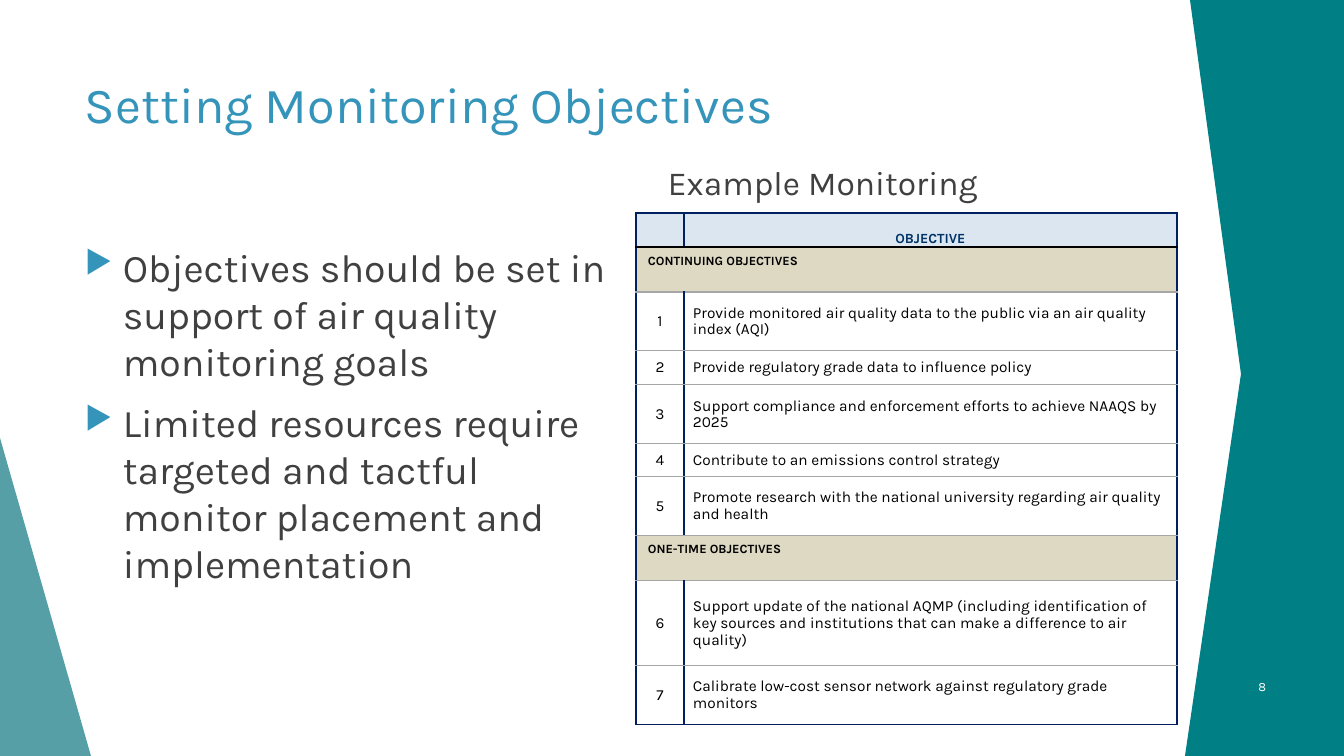
from dataclasses import dataclass
from typing import Any

from lxml import etree
from pptx import Presentation
from pptx.dml.color import RGBColor
from pptx.enum.shapes import MSO_SHAPE
from pptx.enum.text import MSO_ANCHOR, PP_ALIGN
from pptx.oxml.ns import qn
from pptx.util import Emu, Pt

RIGHT_TRIANGLE = MSO_SHAPE.RIGHT_TRIANGLE
TOP, MIDDLE, BOTTOM = MSO_ANCHOR.TOP, MSO_ANCHOR.MIDDLE, MSO_ANCHOR.BOTTOM
LEFT, CENTER, RIGHT = PP_ALIGN.LEFT, PP_ALIGN.CENTER, PP_ALIGN.RIGHT

FONT = "Karla"
BLUE, TEAL, PALE_TEAL = "3494BA", "008085", "3A8F98"
TEXT_GREY, WHITE, BLACK = "404040", "FFFFFF", "000000"
NAVY, RULE_GREY = "002060", "A6A6A6"
EMU_PER_PX = 914400 / 100.8


def px(length: int) -> Emu:
    return Emu(round(length * EMU_PER_PX))


def color(value: str) -> RGBColor:
    return RGBColor.from_string(value)


@dataclass
class TextBlock:
    box: tuple[int, int, int, int]
    paragraphs: list[str]
    size: int
    ink: str = TEXT_GREY
    align: Any = LEFT
    anchor: Any = TOP
    bullets: bool = False


@dataclass
class RowStyle:
    size: int
    ink: str
    bold: bool
    line_pt: float
    after_pt: int
    anchor: Any
    margins: tuple[int, int, int, int]
    aligns: tuple[Any, Any]
    fill: str | None = None


@dataclass
class ObjectiveRow:
    height: int
    cells: tuple[str, str]
    style: RowStyle
    merged: bool = False


def add_span(para: Any, text: str, size: int, ink: str, bold: bool = False) -> None:
    span = para.add_run()
    span.text = text
    for name, value in {"name": FONT, "size": Pt(size), "bold": bold}.items():
        setattr(span.font, name, value)
    span.font.color.rgb = color(ink)


def add_bullet(para: Any) -> None:
    props = para._p.get_or_add_pPr()
    props.set("marL", str(px(38)))
    props.set("indent", str(-px(38)))
    tint = etree.SubElement(props, qn("a:buClr"))
    etree.SubElement(tint, qn("a:srgbClr"), val=BLUE)
    etree.SubElement(props, qn("a:buSzPct"), val="80000")
    etree.SubElement(props, qn("a:buChar"), char="▶")


def add_text(page: Any, block: TextBlock) -> None:
    box = page.shapes.add_textbox(*map(px, block.box))
    frame = box.text_frame
    frame.word_wrap = True
    frame.vertical_anchor = block.anchor
    for index, text in enumerate(block.paragraphs):
        para = frame.add_paragraph() if index else frame.paragraphs[0]
        if block.bullets:
            add_bullet(para)
        para.alignment = block.align
        if index:
            para.space_before = Pt(10)
        add_span(para, text, block.size, block.ink)


def paint(shape: Any, fill: str) -> None:
    shape.shadow.inherit = False
    shape.fill.solid()
    shape.fill.fore_color.rgb = color(fill)
    shape.line.fill.background()


def set_borders(cell: Any, borders: dict[str, tuple[str, float]]) -> None:
    props = cell._tc.get_or_add_tcPr()
    for side, (ink, width) in borders.items():
        line = etree.SubElement(props, qn(f"a:ln{side}"), w=str(Pt(width)))
        solid = etree.SubElement(line, qn("a:solidFill"))
        etree.SubElement(solid, qn("a:srgbClr"), val=ink)


def fill_cell(cell: Any, text: str, align: Any, style: RowStyle) -> None:
    left, top, right, bottom = map(px, style.margins)
    formats = {"margin_left": left, "margin_top": top, "margin_right": right,
               "margin_bottom": bottom, "vertical_anchor": style.anchor}
    for name, value in formats.items():
        setattr(cell, name, value)
    if style.fill:
        cell.fill.solid()
        cell.fill.fore_color.rgb = color(style.fill)
    else:
        cell.fill.background()
    para = cell.text_frame.paragraphs[0]
    formats = {"alignment": align, "line_spacing": Pt(style.line_pt),
               "space_after": Pt(style.after_pt)}
    for name, value in formats.items():
        setattr(para, name, value)
    add_span(para, text, style.size, style.ink, style.bold)


def add_objectives(page: Any, left: int, top: int, widths: tuple[int, int],
                   rows: list[ObjectiveRow]) -> None:
    height = sum(row.height for row in rows)
    frame = page.shapes.add_table(len(rows), len(widths), px(left), px(top),
                                  px(sum(widths)), px(height))
    table = frame.table
    table.first_row = table.horz_banding = False
    for column, width in zip(table.columns, widths):
        column.width = px(width)
    # Horizontal rules from the top edge to the bottom edge
    rules = [(NAVY, 1), (BLACK, 1.5)] + [(RULE_GREY, 1)] * (len(rows) - 2) + [(NAVY, 1)]
    for r, row in enumerate(rows):
        table.rows[r].height = px(row.height)
        for c, text in enumerate(row.cells):
            cell = table.cell(r, c)
            set_borders(cell, {"L": (NAVY, 1), "R": (NAVY, 1),
                               "T": rules[r], "B": rules[r + 1]})
            fill_cell(cell, text, row.style.aligns[c], row.style)
        if row.merged:
            table.cell(r, 0).merge(table.cell(r, 1))


HEADER = RowStyle(10, "003366", True, 14.5, 6, BOTTOM, (9, 1, 9, 0), (CENTER, CENTER), "DCE6F1")
SECTION = RowStyle(9, BLACK, True, 11, 2, TOP, (12, 6, 12, 6), (LEFT, LEFT), "DDD9C3")
ITEM = RowStyle(11, BLACK, False, 12, 1, MIDDLE, (9, 1, 9, 0), (CENTER, LEFT))

ROWS = [
    ObjectiveRow(34, ("", "OBJECTIVE"), HEADER),
    ObjectiveRow(45, ("CONTINUING OBJECTIVES", ""), SECTION, True),
    ObjectiveRow(59, ("1", "Provide monitored air quality data to the public via "
                      "an air quality index (AQI)"), ITEM),
    ObjectiveRow(34, ("2", "Provide regulatory grade data to influence policy"), ITEM),
    ObjectiveRow(59, ("3", "Support compliance and enforcement efforts to achieve "
                      "NAAQS by 2025"), ITEM),
    ObjectiveRow(33, ("4", "Contribute to an emissions control strategy"), ITEM),
    ObjectiveRow(59, ("5", "Promote research with the national university regarding "
                      "air quality and health"), ITEM),
    ObjectiveRow(45, ("ONE-TIME OBJECTIVES", ""), SECTION, True),
    ObjectiveRow(85, ("6", "Support update of the national AQMP (including identification "
                      "of key sources and institutions that can make a difference to "
                      "air quality)"), ITEM),
    ObjectiveRow(59, ("7", "Calibrate low-cost sensor network against regulatory "
                      "grade monitors"), ITEM),
]

TEXTS = [
    TextBlock((75, 68, 776, 88), ["Setting Monitoring Objectives"], 36, BLUE),
    TextBlock((75, 238, 541, 427),
              ["Objectives should be set in support of air quality monitoring goals",
               "Limited resources require targeted and tactful monitor placement "
               "and implementation"], 28, bullets=True),
    TextBlock((658, 157, 496, 71), ["Example Monitoring"], 24),
    TextBlock((1201, 667, 75, 40), ["8"], 9, WHITE, RIGHT, MIDDLE),
]

BAND = [(1344, 0), (1344, 756), (1185, 756), (1241, 374), (1190, 0)]


def main() -> None:
    deck = Presentation()
    deck.slide_width, deck.slide_height = px(1344), px(756)
    page = deck.slides.add_slide(deck.slide_layouts[6])

    # Side decorations
    wedge = page.shapes.add_shape(RIGHT_TRIANGLE, px(-2), px(431), px(93), px(325))
    paint(wedge, PALE_TEAL)
    tint = wedge.fill._xPr.find(qn("a:solidFill"))[0]
    etree.SubElement(tint, qn("a:alpha"), val="85000")
    outline = page.shapes.build_freeform(*BAND[0], scale=EMU_PER_PX)
    outline.add_line_segments(BAND[1:], close=True)
    paint(outline.convert_to_shape(), TEAL)

    # Title, bullets, caption and page number
    for block in TEXTS:
        add_text(page, block)

    # Objectives table
    add_objectives(page, 636, 213, (48, 493), ROWS)
    deck.save("out.pptx")


if __name__ == "__main__":
    main()
